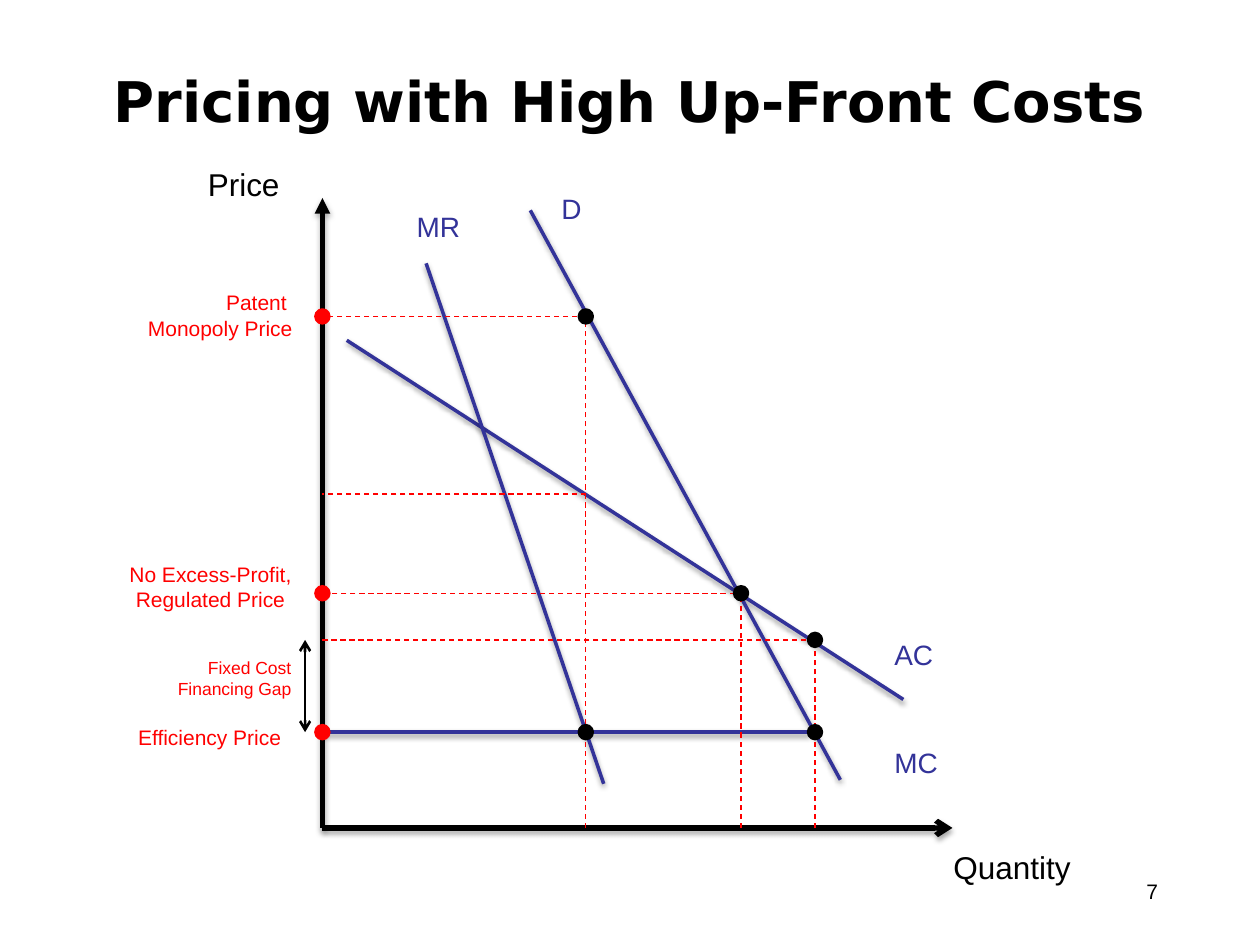
"""Draw the supply and demand slide on pricing with high up-front costs."""
from lxml import etree
from pptx import Presentation
from pptx.dml.color import RGBColor
from pptx.enum.dml import MSO_LINE
from pptx.enum.shapes import MSO_CONNECTOR, MSO_SHAPE
from pptx.enum.text import MSO_ANCHOR, PP_ALIGN
from pptx.oxml.ns import qn
from pptx.util import Cm, Pt

BLACK = RGBColor(0x00, 0x00, 0x00)
RED = RGBColor(0xFF, 0x00, 0x00)
BLUE = RGBColor(0x33, 0x33, 0x99)
LEFT, CENTER, RIGHT = PP_ALIGN.LEFT, PP_ALIGN.CENTER, PP_ALIGN.RIGHT
TOP = MSO_ANCHOR.TOP
DASH = MSO_LINE.DASH
STRAIGHT = MSO_CONNECTOR.STRAIGHT
OVAL = MSO_SHAPE.OVAL


class Painter:
    font = "Arial"
    heading = "DejaVu Sans"
    dot_size = 0.26

    def __init__(self, slide):
        self.slide = slide

    def title(self, text, left, top, width, height):
        shape = self.slide.shapes.title
        shape.left, shape.top = Cm(left), Cm(top)
        shape.width, shape.height = Cm(width), Cm(height)
        frame = shape.text_frame
        frame.text = text
        frame.vertical_anchor = TOP
        frame.margin_top = Cm(0.2)
        self.style(frame, 32, BLACK, CENTER, self.heading, True)

    def style(self, frame, size, color, align, font, bold=False):
        frame.word_wrap = True
        for par in frame.paragraphs:
            par.alignment = align
            par.font.name = font
            par.font.size = Pt(size)
            par.font.bold = bold
            par.font.color.rgb = color

    def label(self, text, left, top, width, height, size, color, align=LEFT):
        box = self.slide.shapes.add_textbox(
            Cm(left), Cm(top), Cm(width), Cm(height))
        box.text_frame.text = text
        self.style(box.text_frame, size, color, align, self.font)

    def line(self, start, end, color, width, dash=None, head=None, tail=None,
             shade=None):
        line = self.slide.shapes.add_connector(
            STRAIGHT, *(Cm(v) for v in (*start, *end)))
        line.line.color.rgb = color
        line.line.width = Pt(width)
        if dash:
            line.line.dash_style = dash
        pen = line.line._get_or_add_ln()
        for tag, kind in (("a:headEnd", head), ("a:tailEnd", tail)):
            if kind:
                etree.SubElement(pen, qn(tag), type=kind)
        effect = etree.SubElement(line._element.spPr, qn("a:effectLst"))
        if shade:
            alpha, gap = shade
            cast = etree.SubElement(
                effect, qn("a:outerShdw"), blurRad=str(Pt(3.1)),
                dist=str(Pt(gap)), dir="5400000", rotWithShape="0")
            tint = etree.SubElement(cast, qn("a:srgbClr"), val=str(BLACK))
            etree.SubElement(tint, qn("a:alpha"), val=str(alpha * 1000))

    def axis(self, start, end, tail):
        self.line(start, end, BLACK, 3, tail=tail, shade=(35, 1.8))

    def curve(self, start, end):
        self.line(start, end, BLUE, 2, shade=(38, 1.6))

    def guide(self, start, end):
        self.line(start, end, RED, 0.75, DASH)

    def dot(self, x, y, color):
        size = self.dot_size
        dot = self.slide.shapes.add_shape(
            OVAL, Cm(x - size / 2), Cm(y - size / 2), Cm(size), Cm(size))
        dot.shadow.inherit = False
        dot.fill.solid()
        dot.fill.fore_color.rgb = color
        dot.line.color.rgb = color
        dot.line.width = Pt(2)


def main():
    deck = Presentation()
    deck.slide_width, deck.slide_height = Cm(25.4), Cm(19.05)
    paint = Painter(deck.slides.add_slide(deck.slide_layouts[5]))
    paint.title("Pricing with High Up-Front Costs", 1.78, 1.14, 21.84, 2.03)

    left, base = 6.5, 16.69
    patent_q, fair_q, best_q = 11.81, 14.94, 16.43
    patent, mid, fair, cost, best = 6.38, 9.96, 11.96, 12.9, 14.76

    paint.axis((left, base), (left, 3.99), "triangle")
    paint.axis((left, base), (19.2, base), "arrow")
    for start, end in (
        ((18.21, 14.1), (6.99, 6.86)),
        ((16.94, 15.72), (10.69, 4.24)),
        ((16.31, best), (left, best)),
        ((12.17, 15.8), (8.59, 5.31)),
    ):
        paint.curve(start, end)

    for x, low, high in (
        (best_q, base, 12.95),
        (fair_q, base, 12.09),
        (patent_q, 14.6, patent),
        (patent_q, base, 14.86),
    ):
        paint.guide((x, low), (x, high))
    for x, y in ((patent_q, patent), (patent_q, mid), (14.81, fair),
                 (best_q, cost)):
        paint.guide((x, y), (left, y))
    paint.line((6.15, best), (6.15, cost), BLACK, 1.5,
               head="arrow", tail="arrow")

    for x, y in ((patent_q, patent), (patent_q, best), (fair_q, fair),
                 (best_q, cost), (best_q, best)):
        paint.dot(x, y, BLACK)
    for y in (patent, fair, best):
        paint.dot(left, y, RED)

    paint.label("Price", 3.94, 3.2, 1.98, 1.02, 18, BLACK)
    paint.label("Quantity", 18.97, 16.97, 4.29, 1.02, 18, BLACK)
    for text, x, y, width in (
        ("D", 11.07, 3.73, 1.07),
        ("MR", 8.15, 4.09, 1.68),
        ("AC", 17.78, 12.73, 1.4),
        ("MC", 17.78, 14.91, 1.4),
    ):
        paint.label(text, x, y, width, 0.94, 16, BLUE)
    for text, x, y, width, height, size, align in (
        ("Patent \nMonopoly Price", 2.34, 5.72, 3.81, 1.27, 12, RIGHT),
        ("No Excess-Profit,\nRegulated Price",
         2.34, 11.2, 3.81, 1.27, 12, CENTER),
        ("Fixed Cost\nFinancing Gap", 3.2, 13.11, 2.92, 1.12, 10, RIGHT),
        ("Efficiency Price", 2.11, 14.48, 3.81, 0.76, 12, RIGHT),
    ):
        paint.label(text, x, y, width, height, size, RED, align)
    paint.label("7", 22.86, 17.58, 1.47, 0.76, 12, BLACK)
    deck.save("out.pptx")


if __name__ == "__main__":
    main()
